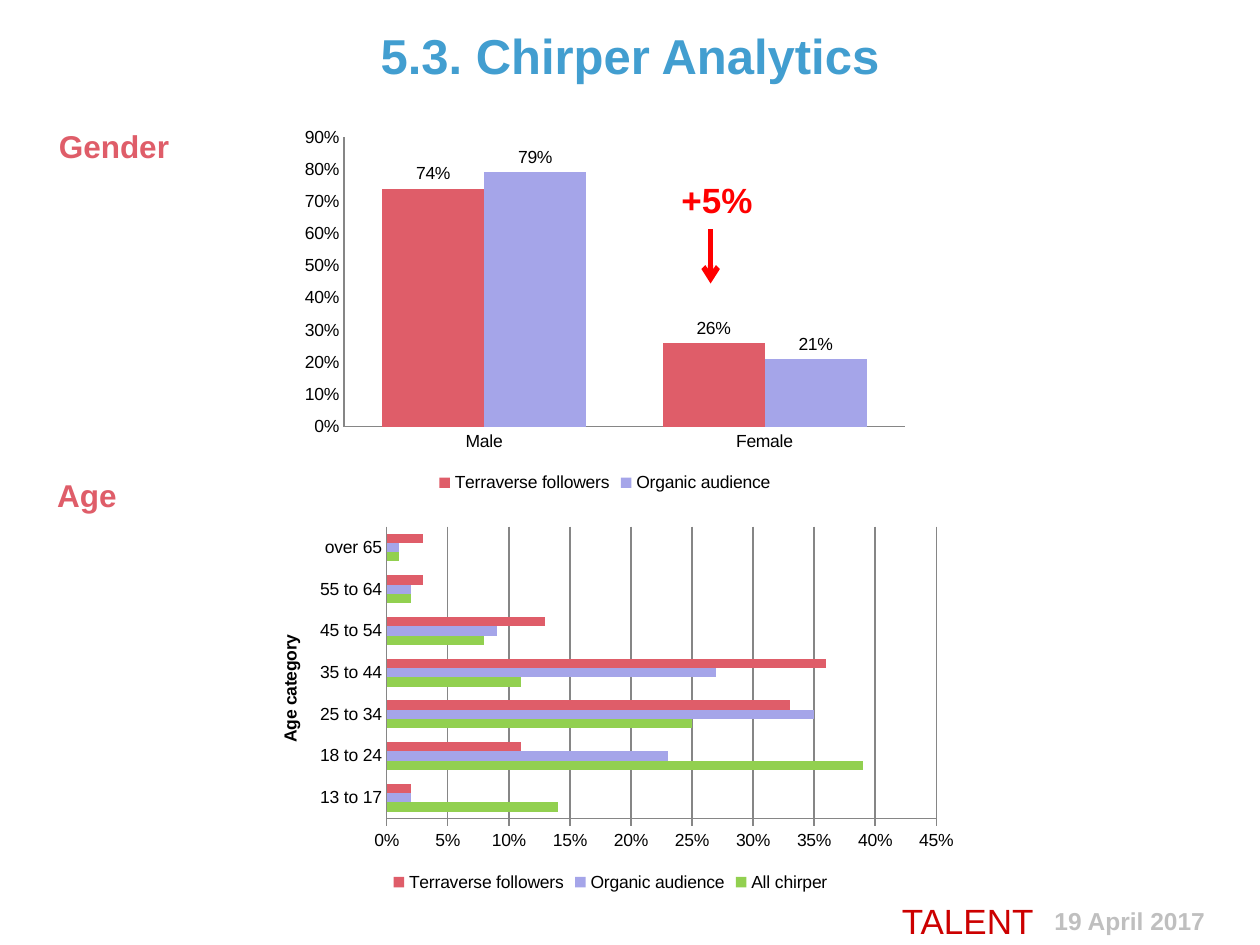
from lxml import etree
from pptx import Presentation
from pptx import util as u
from pptx.chart import data as chart_data
from pptx.dml import color
from pptx.enum import chart as ch, shapes, text
from pptx.oxml import ns

COLORS = {"title": "429ED0", "followers": "DF5D69", "organic": "A5A5E9",
          "all": "92D050", "accent": "FF0000", "brand": "CC0000",
          "date": "BFBFBF", "text": "000000", "axis": "868686"}
FOLLOWERS, ORGANIC, ALL = "Terraverse followers", "Organic audience", "All chirper"
SERIES_COLORS = {FOLLOWERS: "followers", ORGANIC: "organic", ALL: "all"}
GENDERS = ["Male", "Female"]
GENDER_SHARES = {FOLLOWERS: [0.74, 0.26], ORGANIC: [0.79, 0.21]}
AGES = ["13 to 17", "18 to 24", "25 to 34", "35 to 44", "45 to 54", "55 to 64", "over 65"]
AGE_SHARES = {
    ALL: [0.14, 0.39, 0.25, 0.11, 0.08, 0.02, 0.01],
    ORGANIC: [0.02, 0.23, 0.35, 0.27, 0.09, 0.02, 0.01],
    FOLLOWERS: [0.02, 0.11, 0.33, 0.36, 0.13, 0.03, 0.03],
}


def rgb(name):
    """Look up a named colour."""
    return color.RGBColor.from_string(COLORS[name])


def add_label(slide, box, words, size, tint, bold=True, align=text.PP_ALIGN.LEFT,
              wrap=True, anchor=text.MSO_ANCHOR.TOP, spacing=None):
    """Place one line of text in a box."""
    frame = slide.shapes.add_textbox(*map(u.Inches, box)).text_frame
    frame.word_wrap = wrap
    frame.vertical_anchor = anchor
    line = frame.paragraphs[0]
    line.alignment = align
    line.line_spacing = spacing
    run = line.add_run()
    run.text = words
    run.font.name = "Arial"
    run.font.size = u.Pt(size)
    run.font.bold = bold
    run.font.color.rgb = rgb(tint)


def add_share_chart(slide, box, kind, categories, shares, gap, top, step):
    """Place a clustered chart of percentages and return it."""
    data = chart_data.CategoryChartData(number_format="0%")
    data.categories = categories
    for name, values in shares.items():
        data.add_series(name, values)
    chart = slide.shapes.add_chart(kind, *map(u.Inches, box), data).chart
    chart.has_title = False
    chart.font.name = "Arial"
    chart.font.size = u.Pt(10)
    chart.font.color.rgb = rgb("text")
    chart.has_legend = True
    chart.legend.position = ch.XL_LEGEND_POSITION.BOTTOM
    chart.legend.include_in_layout = False
    plot = chart.plots[0]
    plot.gap_width = gap
    plot.overlap = 0
    plot.vary_by_categories = False
    for series in plot.series:
        series.format.fill.solid()
        series.format.fill.fore_color.rgb = rgb(SERIES_COLORS[series.name])
    for axis in (chart.category_axis, chart.value_axis):
        axis.major_tick_mark = axis.minor_tick_mark = ch.XL_TICK_MARK.NONE
        axis.has_major_gridlines = False
        axis.format.line.color.rgb = rgb("axis")
    scale = chart.value_axis
    scale.minimum_scale, scale.maximum_scale, scale.major_unit = 0, top, step
    scale.tick_labels.number_format = "0%"
    scale.tick_labels.number_format_is_linked = False
    return chart


def add_gender_chart(slide, box):
    """Place the column chart of shares by gender."""
    chart = add_share_chart(slide, box, ch.XL_CHART_TYPE.COLUMN_CLUSTERED,
                            GENDERS, GENDER_SHARES, 75, 0.9, 0.1)
    for series in chart.plots[0].series:
        labels = series.data_labels
        labels.show_value = True
        labels.number_format = "0%"
        labels.number_format_is_linked = False
        labels.position = ch.XL_LABEL_POSITION.OUTSIDE_END


def add_age_chart(slide, box):
    """Place the bar chart of shares by age."""
    chart = add_share_chart(slide, box, ch.XL_CHART_TYPE.BAR_CLUSTERED,
                            AGES, AGE_SHARES, 150, 0.45, 0.05)
    scale = chart.value_axis
    scale.major_tick_mark = ch.XL_TICK_MARK.OUTSIDE
    scale.has_major_gridlines = True
    scale.major_gridlines.format.line.color.rgb = rgb("axis")
    title = chart.category_axis.axis_title
    run = title.text_frame.paragraphs[0].add_run()
    run.text = "Age category"
    run.font.name = "Arial"
    run.font.size = u.Pt(10)
    run.font.bold = True
    run.font.color.rgb = rgb("text")
    body = next(title.text_frame.paragraphs[0]._p.getparent().iter(ns.qn("a:bodyPr")))
    body.set("rot", "-5400000")
    body.set("vert", "horz")


def add_down_arrow(slide, x, top, bottom):
    """Draw the arrow from the gain down to its column."""
    arrow = slide.shapes.add_connector(shapes.MSO_CONNECTOR.STRAIGHT,
                                       *map(u.Inches, (x, top, x, bottom)))
    arrow.line.color.rgb = rgb("accent")
    arrow.line.width = u.Pt(3)
    etree.SubElement(arrow.line._get_or_add_ln(), ns.qn("a:tailEnd"), type="arrow")
    etree.SubElement(arrow._element.spPr, ns.qn("a:effectLst"))


def add_footer(slide):
    """Place the company name and the date."""
    add_label(slide, (8.27, 7.14, 1.69, 0.34), "19 April 2017", 14, "date")
    add_label(slide, (6.97, 7.13, 1.42, 0.4), "TALENT", 20, "brand", bold=False,
              align=text.PP_ALIGN.CENTER, spacing=0.9)


def main():
    """Build the analytics slide."""
    deck = Presentation()
    deck.slide_width, deck.slide_height = u.Inches(10), u.Inches(7.5)
    slide = deck.slides.add_slide(deck.slide_layouts[6])
    center = text.PP_ALIGN.CENTER
    add_footer(slide)
    add_label(slide, (0.5, 0.01, 9, 0.85), "5.3. Chirper Analytics", 28, "title",
              align=center, anchor=text.MSO_ANCHOR.MIDDLE)
    add_label(slide, (0.36, 0.96, 1.09, 0.4), "Gender", 18, "followers",
              align=center, wrap=False)
    add_label(slide, (0.35, 3.73, 0.68, 0.4), "Age", 18, "followers",
              align=center, wrap=False)
    add_gender_chart(slide, (2.32, 0.95, 4.96, 3))
    add_age_chart(slide, (2.01, 4.12, 5.67, 3))
    add_down_arrow(slide, 5.64, 1.82, 2.25)
    add_label(slide, (5.31, 1.37, 1.02, 0.44), "+5%", 20, "accent")
    deck.save("out.pptx")


if __name__ == "__main__":
    main()
